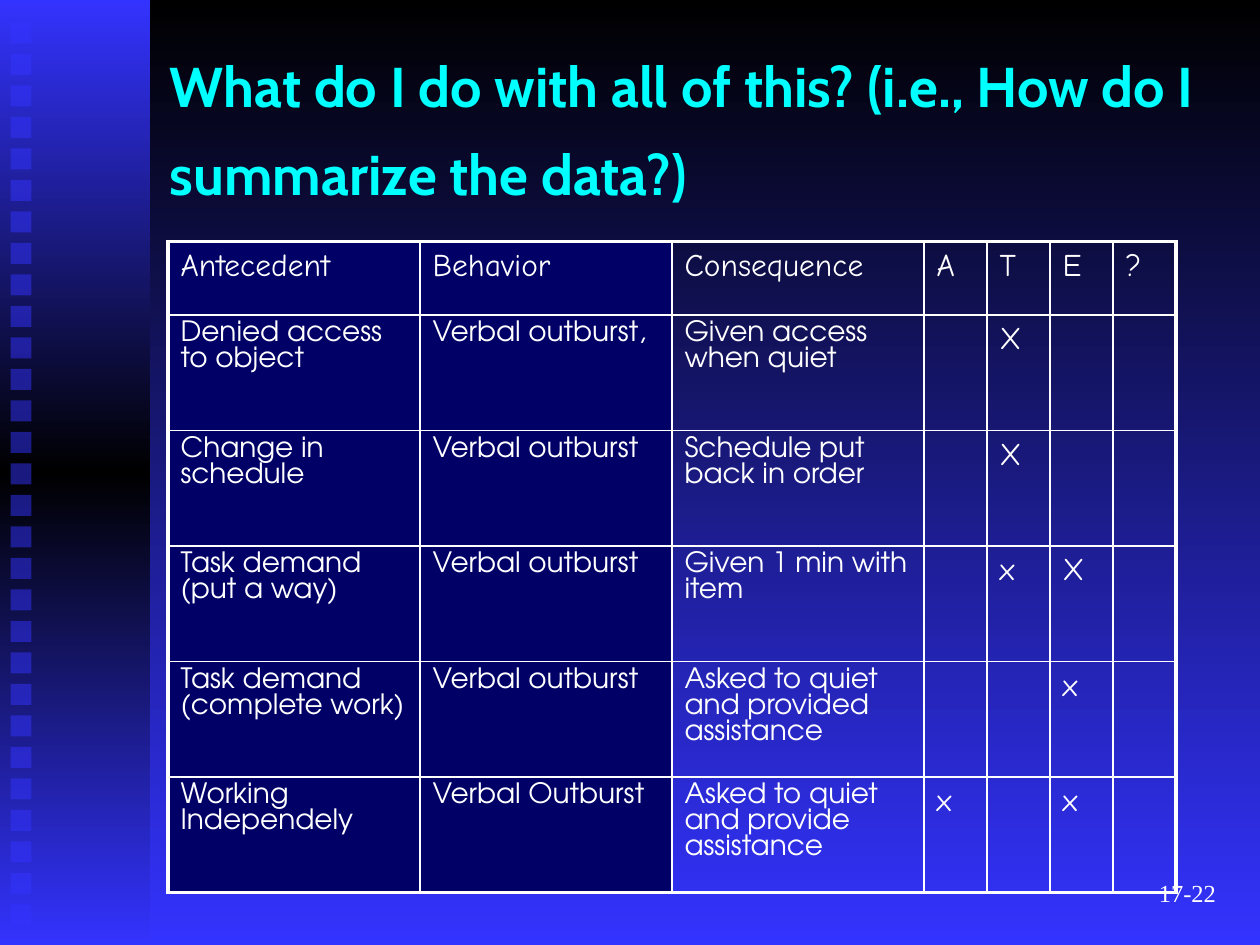
from copy import deepcopy
from pptx import Presentation
from pptx.dml.color import RGBColor as RGB
from pptx.enum.shapes import MSO_SHAPE as Shape
from pptx.enum.text import MSO_ANCHOR as Anchor, PP_ALIGN as Align
from pptx.oxml import parse_xml
from pptx.oxml.ns import nsdecls, qn
from pptx.util import Pt

# Content
TITLE = [
    ("What do I do with all of this? (i.e., How do I summarize the data?)",
     "Cabin", 32, "00FFFF", True),
    (" ", "Times New Roman", 44, "00FFFF", False),
]
NUMBER = [("17-22", "Times New Roman", 14, "FFFFFF", False)]
ROWS = [
    ("Antecedent", "Behavior", "Consequence", "A", "T", "E", "?"),
    ("Denied access to object", "Verbal outburst,",
     "Given access when quiet", "", "X", "", ""),
    ("Change in schedule", "Verbal outburst",
     "Schedule put back in order", "", "X", "", ""),
    ("Task demand (put a way)", "Verbal outburst",
     "Given 1 min with item", "", "x", "X", ""),
    ("Task demand (complete work)", "Verbal outburst",
     "Asked to quiet and provided assistance", "", "", "x", ""),
    ("Working Independely", "Verbal Outburst",
     "Asked to quiet and provide assistance", "x", "", "x", ""),
]
WIDTHS = [144] * 3 + [36] * 4
HEIGHTS = [42] + [66] * 5
BLUE, BLACK, NAVY, WHITE = "3333FF", "000000", "000066", "FFFFFF"


def color(code):
    return RGB.from_string(code)


def blend(fill, root, codes):
    """Fill from top to bottom with evenly spaced colours."""
    fill.gradient()
    fill.gradient_angle = 270
    stops = root.find(".//" + qn("a:gsLst"))
    while len(stops) < len(codes):
        stops.append(deepcopy(stops[-1]))
    for i, (stop, code) in enumerate(zip(fill.gradient_stops, codes)):
        stop.color.rgb = color(code)
        stop.position = i / (len(codes) - 1)


def add_run(para, text, face, size, code, bold=False):
    run = para.add_run()
    run.text = text
    font = run.font
    font.name, font.size, font.bold = face, Pt(size), bold
    font.color.rgb = color(code)


def add_text(slide, box, runs, align):
    frame = slide.shapes.add_textbox(*map(Pt, box)).text_frame
    frame.word_wrap = True
    frame.vertical_anchor = Anchor.MIDDLE
    para = frame.paragraphs[0]
    para.alignment = align
    for run in runs:
        add_run(para, *run)


def add_rect(shapes, *box):
    rect = shapes.add_shape(Shape.RECTANGLE, *map(Pt, box))
    rect.shadow.inherit = False
    rect.line.fill.background()
    return rect


def add_edges(cell, thick):
    props = cell._tc.get_or_add_tcPr()
    for i, side in enumerate("LRTB"):
        width = Pt(2.25 if side in thick else 1)
        props.insert(i, parse_xml(
            f'<a:ln{side} {nsdecls("a")} w="{width}"><a:solidFill>'
            f'<a:srgbClr val="{WHITE}"/></a:solidFill></a:ln{side}>'))


deck = Presentation()
deck.slide_width, deck.slide_height = Pt(720), Pt(540)
slide = deck.slides.add_slide(deck.slide_layouts[6])
blend(slide.background.fill, slide._element, [BLACK, BLUE])

# Side band with a column of squares
band = slide.shapes.add_group_shape().shapes
bar = add_rect(band, 0, 0, 85.7, 540)
blend(bar.fill, bar._element, [BLUE, BLACK, BLUE])
for i in range(29):
    square = add_rect(band, 6, 12.8 + 18 * i, 12, 12)
    square.fill.solid()
    square.fill.fore_color.rgb = color(BLUE)
    tint = square._element.find(".//" + qn("a:srgbClr"))
    tint.append(parse_xml(f'<a:alpha {nsdecls("a")} val="50000"/>'))

# Title
add_text(slide, (90, 30, 612, 90), TITLE, Align.LEFT)

# Table
table = slide.shapes.add_table(
    len(ROWS), len(WIDTHS), Pt(96), Pt(138),
    Pt(sum(WIDTHS)), Pt(sum(HEIGHTS))).table
table.first_row = table.horz_banding = False
for col, width in zip(table.columns, WIDTHS):
    col.width = Pt(width)
for row, height in zip(table.rows, HEIGHTS):
    row.height = Pt(height)
for r, row in enumerate(ROWS):
    for c, text in enumerate(row):
        cell = table.cell(r, c)
        if c < 2:
            cell.fill.solid()
            cell.fill.fore_color.rgb = color(NAVY)
        else:
            cell.fill.background()
        ends = {"L": c == 0, "R": c == len(row) - 1,
                "T": r == 0, "B": r == len(ROWS) - 1}
        add_edges(cell, [side for side, end in ends.items() if end])
        if text:
            plain = r > 0 and c < 3
            face, size = (("TeX Gyre Adventor", 16) if plain
                          else ("Comic Neue", 18))
            add_run(cell.text_frame.paragraphs[0], text, face, size, WHITE)

# Slide number
add_text(slide, (552, 492, 150, 36), NUMBER, Align.RIGHT)

deck.save("out.pptx")
